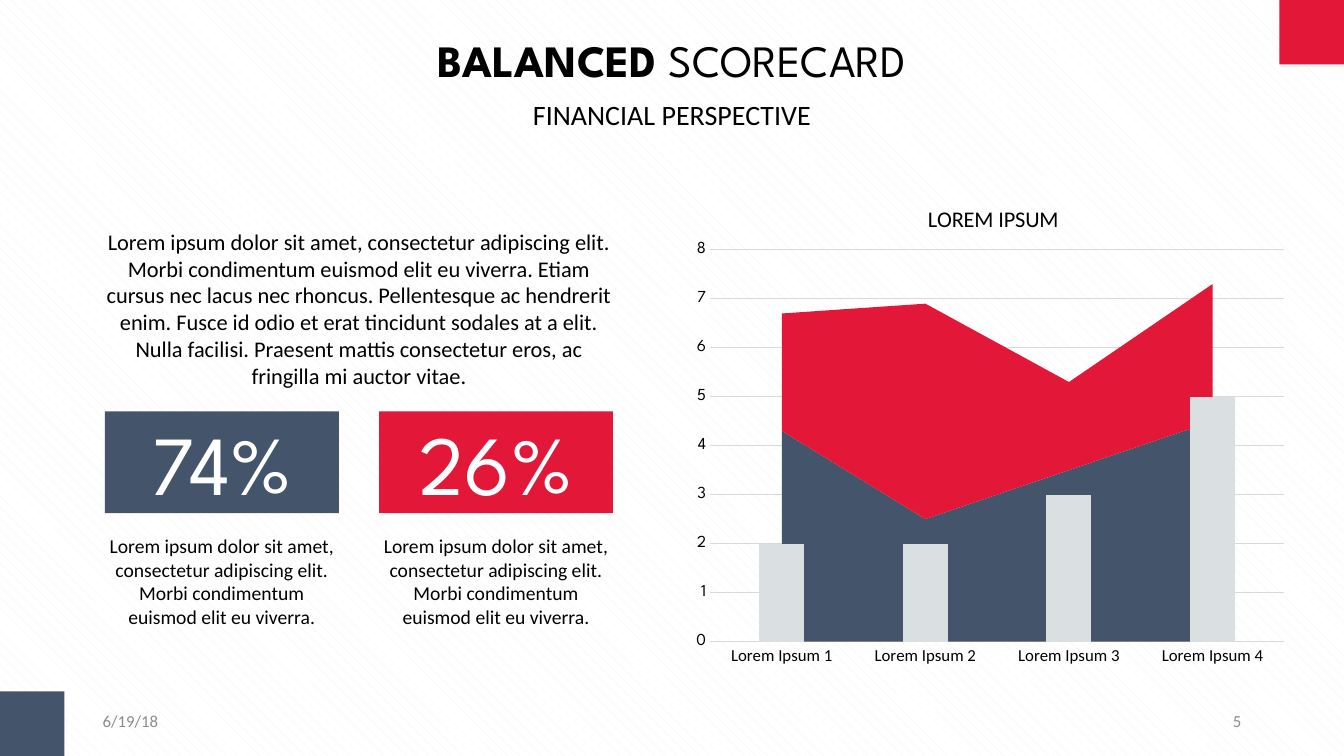
"""Builds the financial perspective slide of a balanced scorecard."""
from dataclasses import dataclass

from pptx import Presentation
from pptx.chart.data import CategoryChartData
from pptx.dml.color import RGBColor
from pptx.enum.chart import XL_CHART_TYPE as Chart, XL_TICK_MARK as Tick
from pptx.enum.dml import MSO_PATTERN as Pattern
from pptx.enum.shapes import MSO_SHAPE as Shape
from pptx.enum.text import MSO_ANCHOR as Anchor, PP_ALIGN as Align
from pptx.oxml import parse_xml
from pptx.oxml.ns import nsdecls, qn
from pptx.util import Inches, Pt


@dataclass(frozen=True)
class Theme:
    navy: str = "44546A"
    red: str = "E31737"
    silver: str = "DADFE1"
    grid: str = "D9D9D9"
    muted: str = "8C8C8C"
    black: str = "000000"
    white: str = "FFFFFF"
    hatch: str = "F2F2F2"
    body: str = "Calibri"
    display: str = "League Spartan"
    title: int = 32
    subtitle: int = 20
    lead: int = 16
    note: int = 14
    small: int = 12
    figure: int = 60


T = Theme()
TITLE = [("BALANCED ", True), ("SCORECARD", False)]
SUBTITLE = "FINANCIAL PERSPECTIVE"
LEAD = ("Lorem ipsum dolor sit amet, consectetur adipiscing elit. Morbi condimentum "
        "euismod elit eu viverra. Etiam cursus nec lacus nec rhoncus. Pellentesque ac "
        "hendrerit enim. Fusce id odio et erat tincidunt sodales at a elit. Nulla "
        "facilisi. Praesent mattis consectetur eros, ac fringilla mi auctor vitae.")
NOTE = ("Lorem ipsum dolor sit amet, consectetur adipiscing elit. "
        "Morbi condimentum euismod elit eu viverra.")
CARDS = [("74%", T.navy, NOTE), ("26%", T.red, NOTE)]
DATE, PAGE = "6/19/18", "5"
CHART_TITLE = "LOREM IPSUM"
CATEGORIES = [f"Lorem Ipsum {n}" for n in range(1, 5)]
SERIES = [("Series 1", (4.3, 2.5, 3.5, 4.5), T.navy),
          ("Series 2", (2.4, 4.4, 1.8, 2.8), T.red),
          ("Series 3", (2, 2, 3, 5), T.silver)]

W, H = 13.33, 7.5
CORNER = 0.64
HEAD_W = W * 0.76
HEAD_X = (W - HEAD_W) / 2
CARD_X, CARD_W, CARD_GAP = 1.04, 2.32, 0.4
CARDS_W = len(CARDS) * (CARD_W + CARD_GAP) - CARD_GAP
FOOT_X, FOOT_W = 0.92, 3
CHART_BOX = (6.8, 1.79, 6.06, 4.92)


def rgb(color):
    return RGBColor.from_string(color)


def style(font, size, color=T.black, face=T.body, bold=False):
    font.size, font.name, font.bold = Pt(size), face, bold
    font.color.rgb = rgb(color)


def add_rect(slide, box, color):
    s = slide.shapes.add_shape(Shape.RECTANGLE, *map(Inches, box))
    s.shadow.inherit = False
    s.fill.solid()
    s.fill.fore_color.rgb = rgb(color)
    s.line.fill.background()
    return s


def write(s, text, size, color=T.black, face=T.body, align=Align.CENTER,
          anchor=Anchor.TOP, inset=(0, 0)):
    runs = [(text, False)] if isinstance(text, str) else text
    tf = s.text_frame
    tf.word_wrap, tf.vertical_anchor = True, anchor
    tf.margin_left = tf.margin_right = Inches(inset[0])
    tf.margin_top = tf.margin_bottom = Inches(inset[1])
    p = tf.paragraphs[0]
    p.alignment = align
    for words, bold in runs:
        r = p.add_run()
        r.text = words
        style(r.font, size, color, face, bold)


def add_text(slide, box, text, size, **fmt):
    write(slide.shapes.add_textbox(*map(Inches, box)), text, size, **fmt)


def place(parent, index, target="", **shares):
    for old in parent.findall(qn("c:layout")):
        parent.remove(old)
    inner = f'<c:layoutTarget val="{target}"/>' if target else ""
    modes = "".join(f'<c:{k}Mode val="edge"/>' for k in shares if k in "xy")
    sizes = "".join(f'<c:{k} val="{v}"/>' for k, v in shares.items())
    parent.insert(index, parse_xml(
        f'<c:layout {nsdecls("c")}><c:manualLayout>{inner}{modes}{sizes}'
        '</c:manualLayout></c:layout>'))


def last_area_to_columns(chart):
    area = next(chart.element.iter(qn("c:areaChart")))
    bars = parse_xml(f'<c:barChart {nsdecls("c")}><c:barDir val="col"/>'
                     '<c:grouping val="clustered"/><c:varyColors val="0"/></c:barChart>')
    bars.append(area.findall(qn("c:ser"))[-1])
    bars.append(parse_xml(f'<c:gapWidth {nsdecls("c")} val="219"/>'))
    for ax in area.findall(qn("c:axId")):
        bars.append(parse_xml(f'<c:axId {nsdecls("c")} val="{ax.get("val")}"/>'))
    area.addnext(bars)
    next(chart.element.iter(qn("c:crossBetween"))).set("val", "between")


def add_scorecard_chart(slide):
    data = CategoryChartData()
    data.categories = CATEGORIES
    for name, values, _ in SERIES:
        data.add_series(name, values)
    chart = slide.shapes.add_chart(
        Chart.AREA_STACKED, *map(Inches, CHART_BOX), data).chart
    last_area_to_columns(chart)
    style(chart.font, T.small)
    chart.has_legend = False
    chart.has_title = True
    p = chart.chart_title.text_frame.paragraphs[0]
    r = p.add_run()
    r.text = CHART_TITLE
    style(r.font, T.lead)
    title = next(chart.element.iter(qn("c:title")))
    place(title, 1, x=0.39, y=0.04)
    place(next(chart.element.iter(qn("c:plotArea"))), 0, "inner",
          x=0.04, y=0.14, w=0.94, h=0.79)

    for plot in chart.plots:
        plot.vary_by_categories = False
    drawn = [ser for plot in chart.plots for ser in plot.series]
    for ser, (_, _, color) in zip(drawn, SERIES):
        ser.format.fill.solid()
        ser.format.fill.fore_color.rgb = rgb(color)
        ser.format.line.fill.background()

    cat, val = chart.category_axis, chart.value_axis
    for axis, face in ((cat, T.body), (val, T.display)):
        axis.major_tick_mark = axis.minor_tick_mark = Tick.NONE
        style(axis.tick_labels.font, T.small, face=face)
    cat.has_major_gridlines = False
    val.has_major_gridlines = True
    val.minimum_scale, val.maximum_scale, val.major_unit = 0, 8, 1
    val.format.line.fill.background()
    for line in (cat.format.line, val.major_gridlines.format.line):
        line.color.rgb, line.width = rgb(T.grid), Pt(0.75)


def main():
    prs = Presentation()
    prs.slide_width, prs.slide_height = Inches(W), Inches(H)
    slide = prs.slides.add_slide(prs.slide_layouts[6])
    fill = slide.background.fill
    fill.patterned()
    fill.pattern = Pattern.SHINGLE
    fill.fore_color.rgb, fill.back_color.rgb = rgb(T.hatch), rgb(T.white)

    add_rect(slide, (W - CORNER, 0, CORNER, CORNER), T.red)
    add_rect(slide, (0, H - CORNER, CORNER, CORNER), T.navy)
    for x, text, align in ((FOOT_X, DATE, Align.LEFT),
                           (W - FOOT_X - FOOT_W, PAGE, Align.RIGHT)):
        add_text(slide, (x, 6.95, FOOT_W, 0.4), text, T.small, color=T.muted,
                 align=align, anchor=Anchor.MIDDLE, inset=(0.1, 0.05))
    add_text(slide, (HEAD_X, 0.32, HEAD_W, 0.54), TITLE, T.title,
             face=T.display, anchor=Anchor.MIDDLE)
    add_text(slide, (HEAD_X, 0.97, HEAD_W, 0.34), SUBTITLE, T.subtitle)
    add_scorecard_chart(slide)
    add_text(slide, (CARD_X, 2.26, CARDS_W, 1.62), LEAD, T.lead)
    for i, (figure, color, note) in enumerate(CARDS):
        x = CARD_X + i * (CARD_W + CARD_GAP)
        write(add_rect(slide, (x, 4.08, CARD_W, 1.01), color), figure, T.figure,
              color=T.white, face=T.display)
        add_text(slide, (x, 5.3, CARD_W, 0.94), note, T.note)
    prs.save("out.pptx")


if __name__ == "__main__":
    main()
